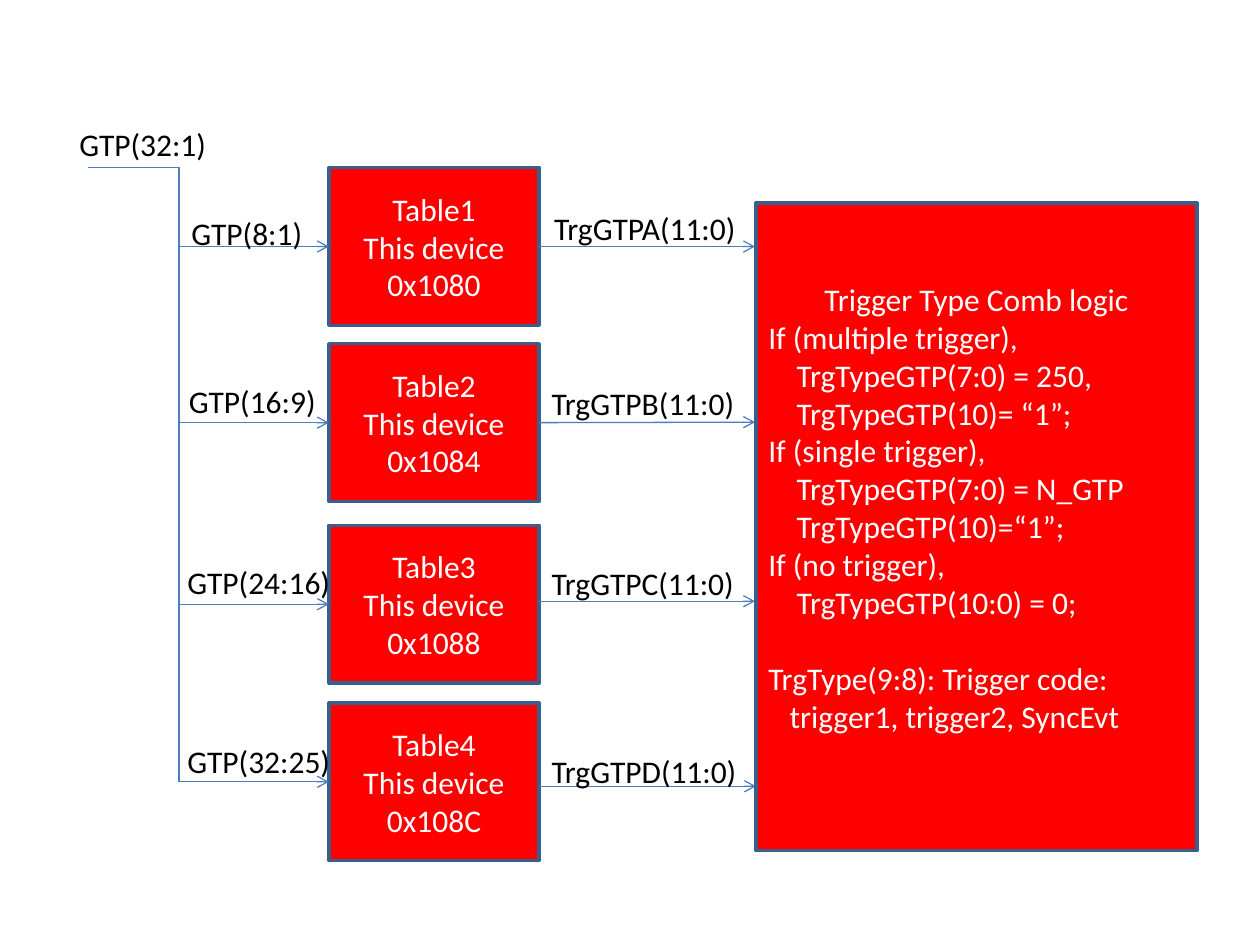
from pptx import Presentation
from pptx import util as u
from pptx.dml.color import RGBColor
from pptx.enum import shapes, text
from pptx.oxml import ns
from lxml import etree

RED = RGBColor(0xFF, 0x00, 0x00)
EDGE = RGBColor(0x3A, 0x5F, 0x8C)
WIRE = RGBColor(0x4B, 0x7E, 0xBC)
WHITE = RGBColor(0xFF, 0xFF, 0xFF)
BLACK = RGBColor(0x00, 0x00, 0x00)

# Lengths in cm. Table: name, address, top
TABLES = [
    ("Table1", "0x1080", 3.38),
    ("Table2", "0x1084", 6.93),
    ("Table3", "0x1088", 10.59),
    ("Table4", "0x108C", 14.17),
]
# Output wires: height, right end
OUTS = [(4.97, 15.22), (8.51, 15.22), (12.12, 15.22), (15.85, 15.24)]
# Label: text, left, top, width
LABELS = [
    ("GTP(32:1)", 1.35, 2.39, 3.1),
    ("GTP(8:1)", 3.61, 4.19, 2.77),
    ("GTP(16:9)", 3.56, 7.57, 3.1),
    ("GTP(24:16)", 3.53, 11.23, 3.43),
    ("GTP(32:25)", 3.53, 14.83, 3.43),
    ("TrgGTPA(11:0)", 10.92, 4.09, 4.22),
    ("TrgGTPB(11:0)", 10.87, 7.62, 4.24),
    ("TrgGTPC(11:0)", 10.87, 11.25, 4.22),
    ("TrgGTPD(11:0)", 10.87, 15.04, 4.29),
]
# Logic line: text, indent
LOGIC = [
    ("Trigger Type Comb logic", 0),
    ("If (multiple trigger),", 0),
    ("TrgTypeGTP(7:0) = 250,", 0.57),
    ("TrgTypeGTP(10)= “1”;", 0.57),
    ("If (single trigger),", 0),
    ("TrgTypeGTP(7:0) = N_GTP", 0.57),
    ("TrgTypeGTP(10)=“1”;", 0.57),
    ("If (no trigger),", 0),
    ("TrgTypeGTP(10:0) = 0;", 0.57),
    ("TrgType(9:8): Trigger code:", 0),
    ("trigger1, trigger2, SyncEvt", 0.43),
]
BREAK = 9  # logic line that follows a gap of one line
GAP = u.Pt(22)
LEFT, WIDE, HIGH = 6.63, 4.24, 3.18
BUS, START = 3.61, 1.78
FONT = {"name": "Calibri", "size": u.Pt(18)}


def write(frame, lines, color, align):
    for i, line in enumerate(lines):
        par = frame.paragraphs[0] if i == 0 else frame.add_paragraph()
        par.alignment = align
        run = par.add_run()
        run.text = line
        for key, val in FONT.items():
            setattr(run.font, key, val)
        run.font.color.rgb = color


def block(slide, at, lines, align):
    box = slide.shapes.add_shape(shapes.MSO_SHAPE.RECTANGLE, *map(u.Cm, at))
    box.shadow.inherit = False
    box.fill.solid()
    box.fill.fore_color.rgb = RED
    box.line.color.rgb = EDGE
    box.line.width = u.Pt(2)
    box.text_frame.word_wrap = True
    box.text_frame.vertical_anchor = text.MSO_ANCHOR.MIDDLE
    write(box.text_frame, lines, WHITE, align)
    return box


def wire(slide, ends, arrow=True, kind=shapes.MSO_CONNECTOR.STRAIGHT):
    line = slide.shapes.add_connector(kind, *map(u.Cm, ends))
    line.line.color.rgb = WIRE
    line.line.width = u.Pt(0.75)
    if arrow:
        etree.SubElement(line.line._get_or_add_ln(), ns.qn("a:tailEnd"), type="arrow")
    etree.SubElement(line._element.spPr, ns.qn("a:effectLst"))
    return line


def main():
    deck = Presentation()
    deck.slide_width, deck.slide_height = u.Cm(25.4), u.Cm(19.05)
    slide = deck.slides.add_slide(deck.slide_layouts[6])
    mids = [top + HIGH / 2 for _, _, top in TABLES]

    for i, (name, code, top) in enumerate(TABLES):
        box = block(slide, (LEFT, top, WIDE, HIGH),
                    [name, "This device", code], text.PP_ALIGN.CENTER)
        mid = mids[i]
        if i == 0:
            feed = wire(slide, (START, top, LEFT, mid),
                        kind=shapes.MSO_CONNECTOR.ELBOW)
            bend = feed._element.spPr.find(ns.qn("a:prstGeom")).get_or_add_avLst()
            ratio = round((BUS - START) / (LEFT - START) * 100000)
            etree.SubElement(bend, ns.qn("a:gd"), name="adj1", fmla=f"val {ratio}")
        else:
            feed = wire(slide, (BUS, mid, LEFT, mid))
        feed.end_connect(box, 1)

        y, end = OUTS[i]
        out = wire(slide, (LEFT + WIDE, y, end, y))
        if abs(y - mid) < 0.02:
            out.begin_connect(box, 3)
    wire(slide, (BUS, 4.7, BUS, mids[-1]), arrow=False)

    for label, left, top, wide in LABELS:
        note = slide.shapes.add_textbox(*map(u.Cm, (left, top, wide, 1.02)))
        note.text_frame.word_wrap = False
        note.text_frame.auto_size = text.MSO_AUTO_SIZE.SHAPE_TO_FIT_TEXT
        write(note.text_frame, [label], BLACK, text.PP_ALIGN.LEFT)

    logic = block(slide, (15.24, 4.09, 8.89, 13.06),
                  [line for line, _ in LOGIC], text.PP_ALIGN.LEFT)
    frame = logic.text_frame
    frame.margin_bottom = u.Cm(0.13) + GAP
    for par, (_, indent) in zip(frame.paragraphs, LOGIC):
        if indent:
            par._p.get_or_add_pPr().set("marL", str(u.Cm(indent)))
    frame.paragraphs[0].alignment = text.PP_ALIGN.CENTER
    frame.paragraphs[BREAK].space_before = GAP

    deck.save("out.pptx")


if __name__ == "__main__":
    main()
